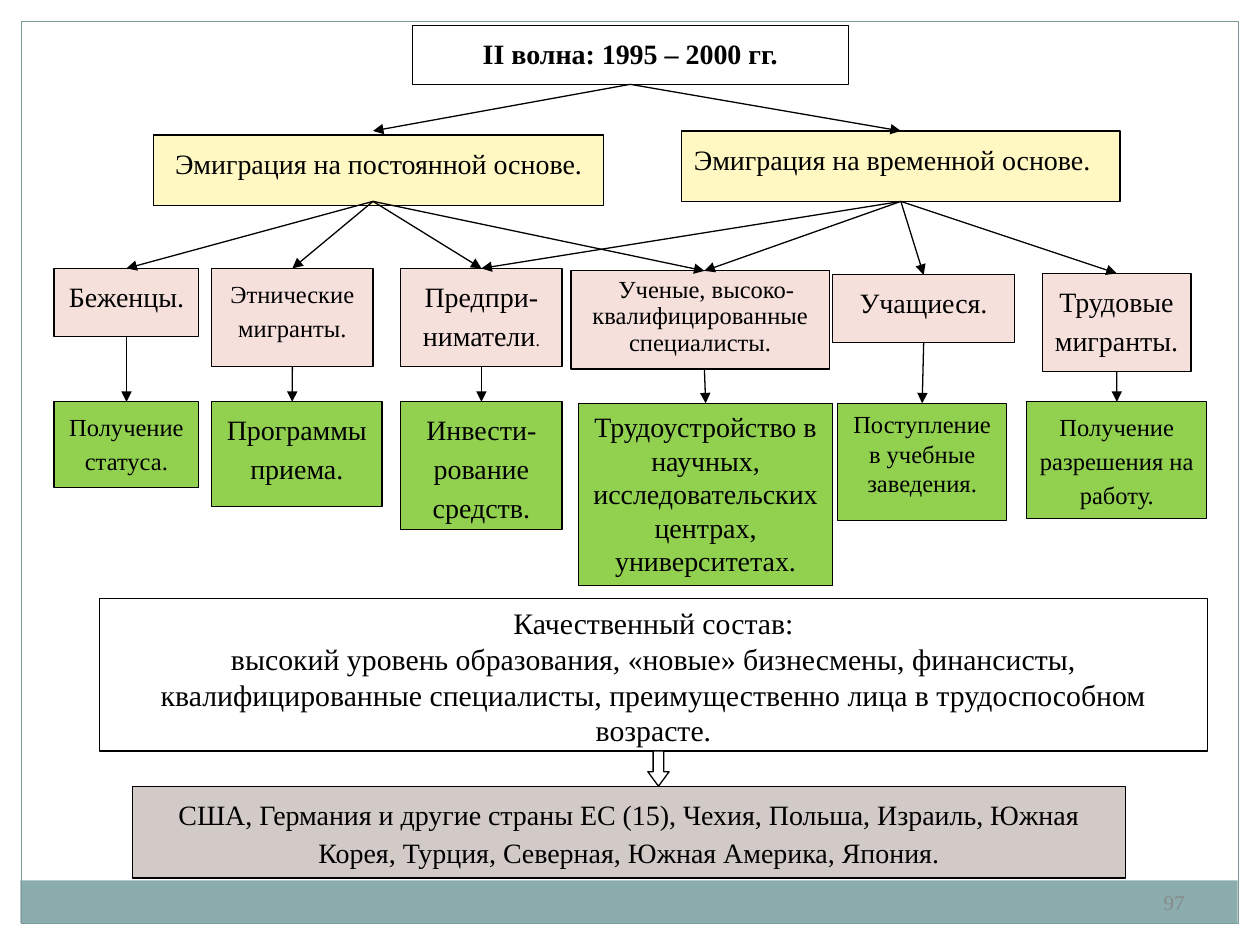
"""Builds a slide charting the second emigration wave of 1995 – 2000."""
from lxml.etree import SubElement
from pptx import Presentation
from pptx.dml.color import RGBColor
from pptx.enum.shapes import MSO_CONNECTOR as Link, MSO_SHAPE as Shape
from pptx.enum.text import MSO_ANCHOR as Anchor, MSO_AUTO_SIZE as AutoSize, PP_ALIGN as Align
from pptx.oxml.ns import qn
from pptx.util import Cm, Pt

BLACK = RGBColor(0x00, 0x00, 0x00)
WHITE = RGBColor(0xFF, 0xFF, 0xFF)
YELLOW = RGBColor(0xFF, 0xF8, 0xC2)
PINK = RGBColor(0xF6, 0xE0, 0xDB)
GREEN = RGBColor(0x92, 0xD0, 0x50)
TAUPE = RGBColor(0xD1, 0xCA, 0xC6)
TEAL = RGBColor(0x8C, 0xAD, 0xAE)
FRAME = RGBColor(0x7C, 0x99, 0x9A)
GREY = RGBColor(0x89, 0x89, 0x89)
FONT = "Times New Roman"

deck = Presentation()
deck.slide_width, deck.slide_height = Cm(25.4), Cm(19.05)
page = deck.slides.add_slide(deck.slide_layouts[5])
shapes = page.shapes


def add_box(place, fill, lines, size=16, spacing=1.15, after=10, align=Align.CENTER, box=None):
    left, top, width, height = map(Cm, place)
    if box is None:
        box = shapes.add_shape(Shape.RECTANGLE, left, top, width, height)
        box.shadow.inherit = False
    else:
        box.left, box.top, box.width, box.height = left, top, width, height
    box.fill.solid()
    box.fill.fore_color.rgb = fill
    box.line.color.rgb = BLACK
    box.line.width = Pt(0.75)
    frame = box.text_frame
    frame.word_wrap = True
    frame.auto_size = AutoSize.NONE
    frame.vertical_anchor = Anchor.TOP
    for number, line in enumerate(lines):
        para = frame.add_paragraph() if number else frame.paragraphs[0]
        para.alignment = align
        para.line_spacing = spacing
        para.space_before, para.space_after = Pt(0), Pt(after)
        span = para.add_run()
        span.text = line
        span.font.name, span.font.size = FONT, Pt(size)
        span.font.color.rgb = BLACK
    return box


def add_arrow(start, end):
    arrow = shapes.add_connector(Link.STRAIGHT, 0, 0, 0, 0)
    if isinstance(start, tuple):
        arrow.begin_x, arrow.begin_y = map(Cm, start)
    else:
        arrow.begin_connect(start, 2)
    if isinstance(end, tuple):
        arrow.end_x, arrow.end_y = map(Cm, end)
    else:
        arrow.end_connect(end, 0)
    arrow.line.color.rgb = BLACK
    arrow.line.width = Pt(0.75)
    SubElement(arrow.line._get_or_add_ln(), qn("a:tailEnd"), type="triangle")
    SubElement(arrow._element.spPr, qn("a:effectLst"))


band = shapes.add_shape(Shape.RECTANGLE, Cm(0.41), Cm(17.75), Cm(24.54), Cm(0.86))
band.shadow.inherit = False
band.fill.solid()
band.fill.fore_color.rgb = TEAL
band.line.fill.background()

border = shapes.add_shape(Shape.RECTANGLE, Cm(0.43), Cm(0.43), Cm(24.54), Cm(18.19))
border.shadow.inherit = False
border.fill.background()
border.line.color.rgb = FRAME
border.line.width = Pt(0.75)

title = add_box((8.31, 0.51, 8.79, 1.19), WHITE, ["II волна: 1995 – 2000 гг."], box=shapes.title)
title.text_frame.paragraphs[0].runs[0].font.bold = True

add_box((3.1, 2.72, 9.07, 1.42), YELLOW, ["Эмиграция на постоянной основе."])
temporary = add_box((13.74, 2.64, 8.84, 1.42), YELLOW, ["Эмиграция на временной основе."],
                    align=Align.LEFT)

refugees = add_box((1.09, 5.41, 2.92, 1.37), PINK, ["Беженцы."])
ethnic = add_box((4.27, 5.41, 3.25, 1.98), PINK, ["Этнические мигранты."], 14)
business = add_box((8.08, 5.41, 3.25, 1.98), PINK, ["Предпри-ниматели"])
scientists = add_box((11.51, 5.46, 5.21, 1.98), PINK,
                     ["Ученые, высоко-квалифицированные специалисты."], 14, 0.9)
students = add_box((16.79, 5.54, 3.66, 1.37), PINK, ["Учащиеся."])
workers = add_box((21.01, 5.51, 3, 1.98), PINK, ["Трудовые мигранты."])

scientists.text_frame.paragraphs[0]._p.get_or_add_pPr().set("indent", str(Cm(0.25)))
stop = business.text_frame.paragraphs[0].add_run()
stop.text = "."
stop.font.name, stop.font.size = FONT, Pt(10)
stop.font.color.rgb = BLACK

status = add_box((1.09, 8.1, 2.92, 1.73), GREEN, ["Получение статуса."], 14)
add_box((4.27, 8.1, 3.43, 2.11), GREEN, ["Программы приема."])
investment = add_box((8.08, 8.1, 3.25, 2.57), GREEN, ["Инвести-рование средств."])
employment = add_box((11.66, 8.13, 5.13, 3.68), GREEN,
                     ["Трудоустройство в научных, исследовательских центрах,", "университетах."],
                     spacing=1, after=0)
study = add_box((16.89, 8.13, 3.4, 2.36), GREEN, ["Поступление ", "в учебные заведения."],
                14, 1, 0)
permit = add_box((20.7, 8.1, 3.63, 2.36), GREEN, ["Получение разрешения на работу."], 14)

add_box((2.01, 12.07, 22.33, 3.07), WHITE,
        ["Качественный состав:",
         "высокий уровень образования, «новые» бизнесмены, финансисты, "
         "квалифицированные специалисты, преимущественно лица в трудоспособном возрасте."],
        17, 1, 0)
add_box((2.67, 15.85, 20.02, 1.85), TAUPE,
        ["США, Германия и другие страны ЕС (15), Чехия, Польша, Израиль, Южная Корея, "
         "Турция, Северная, Южная Америка, Япония."])

permanent_top, permanent_foot = (7.52, 2.64), (7.52, 4.06)
scientists_top, scientists_foot = (14.2, 5.46), (14.2, 7.44)
programs_top = (5.89, 8.1)
for start, ends in [
    (title, [permanent_top, temporary]),
    (permanent_foot, [refugees, ethnic, business, scientists_top]),
    (temporary, [business, scientists_top, students, workers]),
    (refugees, [status]),
    (ethnic, [programs_top]),
    (business, [investment]),
    (scientists_foot, [employment]),
    (students, [study]),
    (workers, [permit]),
]:
    for end in ends:
        add_arrow(start, end)

pointer = shapes.add_shape(Shape.DOWN_ARROW, Cm(13.06), Cm(15.14), Cm(0.43), Cm(0.71))
pointer.shadow.inherit = False
pointer.adjustments[1] = 0.68
pointer.fill.solid()
pointer.fill.fore_color.rgb = WHITE
pointer.line.color.rgb = BLACK
pointer.line.width = Pt(0.75)

number_box = shapes.add_textbox(Cm(22.67), Cm(17.75), Cm(2), Cm(0.86))
number_box.text_frame.word_wrap = True
number_box.text_frame.vertical_anchor = Anchor.MIDDLE
para = number_box.text_frame.paragraphs[0]
para.alignment = Align.CENTER
span = para.add_run()
span.text = "97"
span.font.name, span.font.size = FONT, Pt(12)
span.font.color.rgb = GREY

deck.save("out.pptx")
